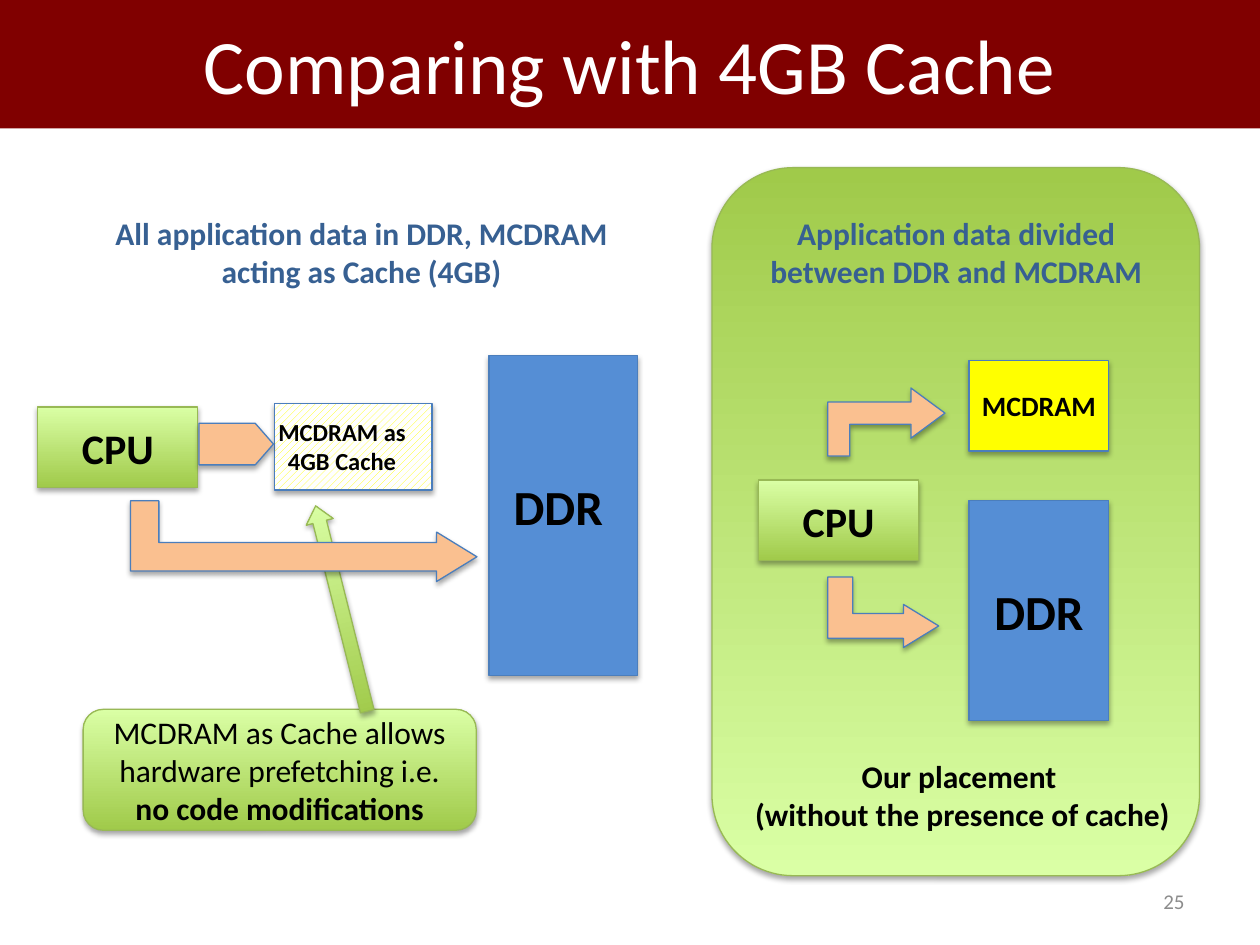
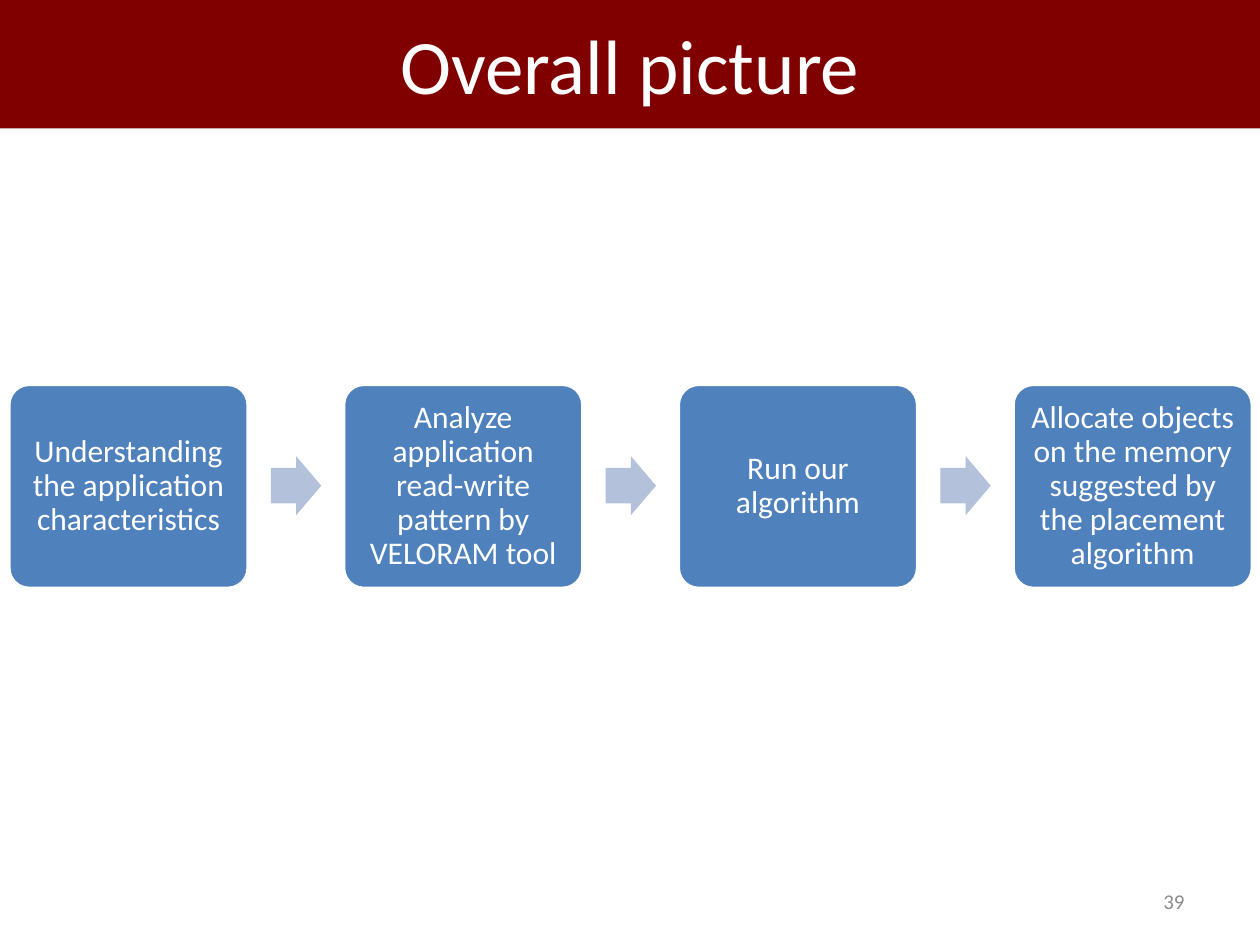
from lxml import etree
from pptx import Presentation
from pptx.dml.color import RGBColor
from pptx.enum import dml, shapes, text
from pptx.oxml import ns
from pptx.util import Inches, Pt

MAROON = RGBColor(0x80, 0x00, 0x00)
WHITE = RGBColor(0xFF, 0xFF, 0xFF)
BLACK = RGBColor(0x00, 0x00, 0x00)
GRAY = RGBColor(0x8C, 0x8C, 0x8C)
HEADING_BLUE = RGBColor(0x37, 0x60, 0x92)
DDR_BLUE = RGBColor(0x55, 0x8E, 0xD5)
EDGE_BLUE = RGBColor(0x4B, 0x7E, 0xBC)
CARD_BLUE = RGBColor(0x4F, 0x81, 0xBD)
PALE_BLUE = RGBColor(0xB3, 0xC1, 0xDB)
YELLOW = RGBColor(0xFF, 0xFF, 0x00)
ORANGE = RGBColor(0xFA, 0xC0, 0x90)
GREEN_DARK = RGBColor(0xA0, 0xCA, 0x4A)
GREEN_LIGHT = RGBColor(0xDA, 0xFF, 0xA5)
GREEN_EDGE = RGBColor(0x98, 0xB9, 0x55)

KIND = shapes.MSO_SHAPE
ALIGN = text.PP_ALIGN
MIDDLE = text.MSO_ANCHOR.MIDDLE
TOP = text.MSO_ANCHOR.TOP


def write(shape, lines, size, color, bold=False, align=ALIGN.CENTER, anchor=MIDDLE):
    """Fill a shape with paragraphs, each a list of (wording, bold) runs or a string."""
    frame = shape.text_frame
    frame_format = {"word_wrap": True, "auto_size": text.MSO_AUTO_SIZE.NONE,
                    "vertical_anchor": anchor}
    for name, value in frame_format.items():
        setattr(frame, name, value)
    for index, line in enumerate(lines):
        paragraph = frame.add_paragraph() if index else frame.paragraphs[0]
        paragraph.alignment = align
        for wording, run_bold in [(line, bold)] if isinstance(line, str) else line:
            run = paragraph.add_run()
            run.text = wording
            run.font.color.rgb = color
            font_format = {"name": "Calibri", "size": Pt(size), "bold": run_bold}
            for name, value in font_format.items():
                setattr(run.font, name, value)


def add_block(slide, kind, box, fill, rotation=0, adjustments=()):
    """Add a softly shadowed shape; fill is a colour, "green" or "hatched"."""
    shape = slide.shapes.add_shape(kind, *map(Inches, box))
    shape.rotation = rotation
    for index, value in enumerate(adjustments):
        shape.adjustments[index] = value
    shape.line.width = Pt(0.75)
    shape.line.color.rgb = GREEN_EDGE if fill == "green" else EDGE_BLUE
    if fill == "green":
        shape.fill.gradient()
        shape.fill.gradient_angle = 90
        for stop, color in zip(shape.fill.gradient_stops, (GREEN_DARK, GREEN_LIGHT)):
            stop.color.rgb = color
    elif fill == "hatched":
        shape.fill.patterned()
        shape.fill.pattern = dml.MSO_PATTERN.WIDE_UPWARD_DIAGONAL
        shape.fill.fore_color.rgb = YELLOW
        shape.fill.back_color.rgb = WHITE
    else:
        shape.fill.solid()
        shape.fill.fore_color.rgb = fill
    shape.shadow.inherit = False
    effects = shape._element.spPr.find(ns.qn("a:effectLst"))
    shadow = etree.SubElement(effects, ns.qn("a:outerShdw"), blurRad=str(Pt(3.1)),
                              dist=str(Pt(1.8)), dir="5400000", rotWithShape="0")
    shade = etree.SubElement(shadow, ns.qn("a:srgbClr"), val="000000")
    etree.SubElement(shade, ns.qn("a:alpha"), val="35000")
    return shape


presentation = Presentation()
presentation.slide_width = Inches(10)
presentation.slide_height = Inches(7.5)

# Title band and page number on every slide
for heading, page in [("Comparing with 4GB Cache", "25"), ("Overall picture", "39")]:
    slide = presentation.slides.add_slide(presentation.slide_layouts[5])
    title = slide.shapes.title
    title_place = {"left": 0, "top": -0.01, "width": 10, "height": 1.03}
    for name, value in title_place.items():
        setattr(title, name, Inches(value))
    title.fill.solid()
    title.fill.fore_color.rgb = MAROON
    write(title, [heading], 44, WHITE)
    number = slide.shapes.add_textbox(*map(Inches, (7.17, 6.95, 2.33, 0.4)))
    write(number, [page], 12, GRAY, align=ALIGN.RIGHT)

comparison, overview = presentation.slides

# Comparison: panel, memories, processors and callout, from back to front
BENT_UP = (0.353, 0.306, 0.5)
add_block(comparison, KIND.ROUNDED_RECTANGLE, (5.65, 1.33, 3.87, 5.62), "green", 180)
add_block(comparison, KIND.BENT_UP_ARROW, (6.73, 4.42, 0.56, 0.88), ORANGE, 90, BENT_UP)
add_block(comparison, KIND.BENT_ARROW, (6.57, 3.08, 0.93, 0.54), ORANGE, 0,
          (0.325, 0.369, 0.5, 0))
add_block(comparison, KIND.RECTANGLE, (3.88, 2.82, 1.18, 2.54), DDR_BLUE)
add_block(comparison, KIND.RECTANGLE, (2.18, 3.2, 1.25, 0.69), "hatched")

labelled_boxes = [
    ("DDR", (7.69, 3.97, 1.11, 1.75), DDR_BLUE, 28),
    ("CPU", (6.02, 3.81, 1.27, 0.64), "green", 24),
    ("MCDRAM", (7.69, 2.86, 1.11, 0.72), YELLOW, 16),
    ("CPU", (0.3, 3.23, 1.27, 0.64), "green", 24),
]
for label, box, fill, size in labelled_boxes:
    write(add_block(comparison, KIND.RECTANGLE, box, fill), [label], size, BLACK, bold=True)

callout = add_block(comparison, KIND.ROUNDED_RECTANGLE, (0.66, 5.63, 3.12, 0.96), "green")
write(callout, [[("MCDRAM as Cache allows hardware prefetching i.e. ", False),
                 ("no code modifications", True)]], 18, BLACK)
add_block(comparison, KIND.UP_ARROW, (2.6, 3.99, 0.22, 1.68), "green", 345.9, (0.5, 0.595))
add_block(comparison, KIND.BENT_UP_ARROW, (2.09, 2.92, 0.64, 2.75), ORANGE, 90, BENT_UP)
add_block(comparison, KIND.BENT_ARROW, (1.58, 3.36, 0.59, 0.33), ORANGE, 0,
          (1, 0.5, 0.437, 0))

captions = [
    (["All application data in DDR, MCDRAM acting as Cache (4GB)"],
     (0.74, 1.65, 4.26, 0.71), 18, HEADING_BLUE),
    (["Application data divided between DDR and MCDRAM"],
     (5.81, 1.65, 3.56, 0.71), 18, HEADING_BLUE),
    (["DDR"], (3.82, 3.73, 1.22, 0.57), 28, BLACK),
    (["MCDRAM as 4GB Cache"], (2.09, 3.26, 1.25, 0.57), 14, BLACK),
    (["Our placement ", "(without the presence of cache)"],
     (5.78, 5.96, 3.72, 0.71), 18, BLACK),
]
for lines, box, size, color in captions:
    caption = comparison.shapes.add_textbox(*map(Inches, box))
    write(caption, lines, size, color, bold=True, anchor=TOP)

# Overview: four steps joined by block arrows
steps = [
    "Understanding the application characteristics",
    "Analyze application read-write pattern by VELORAM tool",
    "Run our algorithm",
    "Allocate objects on the memory suggested by the placement algorithm",
]
FIRST_LEFT, LAST_LEFT = 0.07, 8.04
step_pitch = (LAST_LEFT - FIRST_LEFT) / (len(steps) - 1)
for index, step in enumerate(steps):
    left = FIRST_LEFT + index * step_pitch
    card = overview.shapes.add_shape(KIND.ROUNDED_RECTANGLE, Inches(left), Inches(3.05),
                                     Inches(1.9), Inches(1.62))
    card.adjustments[0] = 0.1
    card.shadow.inherit = False
    card.fill.solid()
    card.fill.fore_color.rgb = CARD_BLUE
    card.line.color.rgb = WHITE
    card.line.width = Pt(2)
    write(card, [step], 18, WHITE)
    card.text_frame.paragraphs[0].line_spacing = 0.9
    for side in ("left", "top", "right", "bottom"):
        setattr(card.text_frame, f"margin_{side}", Inches(0.06))
    if index < len(steps) - 1:
        arrow = overview.shapes.add_shape(KIND.RIGHT_ARROW, Inches(left + 2.08),
                                          Inches(3.62), Inches(0.4), Inches(0.47))
        arrow.adjustments[0] = 0.6
        arrow.shadow.inherit = False
        arrow.fill.solid()
        arrow.fill.fore_color.rgb = PALE_BLUE
        arrow.line.fill.background()

presentation.save("out.pptx")
